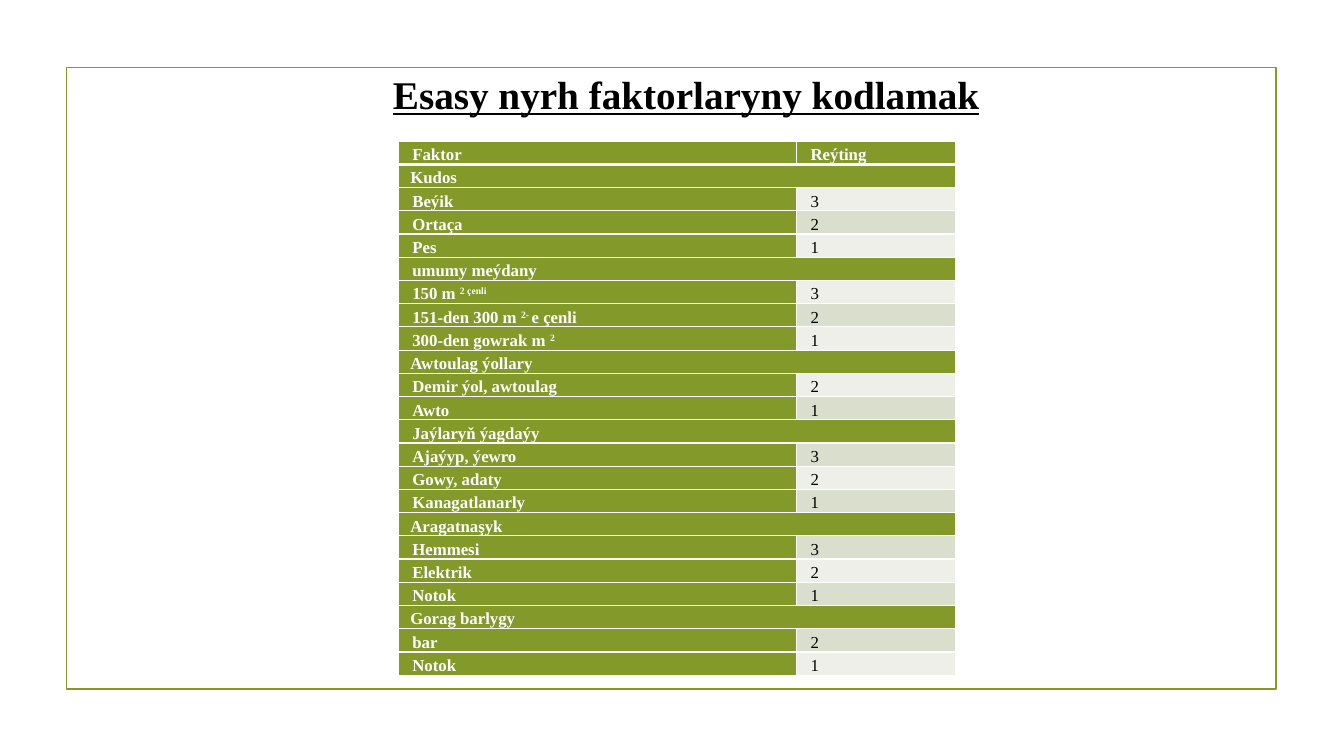
from dataclasses import dataclass

from lxml.etree import SubElement
from pptx import Presentation
from pptx.dml.color import RGBColor
from pptx.enum.shapes import MSO_SHAPE
from pptx.enum.text import MSO_ANCHOR, PP_ALIGN
from pptx.oxml.ns import qn
from pptx.util import Inches, Pt


@dataclass(frozen=True)
class Theme:
    font: str = "Times New Roman"
    olive: str = "83992A"
    light_band: str = "EDEFE8"
    dark_band: str = "D9DECD"
    white: str = "FFFFFF"
    black: str = "000000"
    title_size: int = 28
    table_size: int = 12
    frame_width: float = 1.25
    border: int = 1
    header_border: int = 3
    line_spacing: float = 1.15


# Content: section, its indent in inches, its factors and their ratings;
# text between carets is superscript
HEADER = ("Faktor", "Reýting")
SECTIONS = [
    ("Kudos", 0.12, [("Beýik", 3), ("Ortaça", 2), ("Pes", 1)]),
    ("umumy meýdany", 0.14, [
        ("150 m ^2 çenli^", 3),
        ("151-den 300 m ^2- ^e çenli", 2),
        ("300-den gowrak m ^2^", 1)]),
    ("Awtoulag ýollary", 0.12, [("Demir ýol, awtoulag", 2), ("Awto", 1)]),
    ("Jaýlaryň ýagdaýy", 0.14, [
        ("Ajaýyp, ýewro", 3), ("Gowy, adaty", 2), ("Kanagatlanarly", 1)]),
    ("Aragatnaşyk", 0.12, [("Hemmesi", 3), ("Elektrik", 2), ("Notok", 1)]),
    ("Gorag barlygy", 0.12, [("bar", 2), ("Notok", 1)]),
]
FACTOR_INDENT = 0.14


class SlideBuilder:
    """Places elements by percentages of the slide's width and height."""

    def __init__(self, deck, theme):
        self.deck, self.theme = deck, theme
        self.slide = deck.slides.add_slide(deck.slide_layouts[6])

    def across(self, percent):
        return round(self.deck.slide_width * percent / 100)

    def down(self, percent):
        return round(self.deck.slide_height * percent / 100)

    def area(self, left, top, width, height):
        return (self.across(left), self.down(top),
                self.across(width), self.down(height))

    def add_runs(self, paragraph, text, color, **formats):
        for position, part in enumerate(text.split("^")):
            if not part:
                continue
            run = paragraph.add_run()
            run.text = part
            run.font.color.rgb = RGBColor.from_string(color)
            for attribute, value in {"name": self.theme.font, **formats}.items():
                setattr(run.font, attribute, value)
            if position % 2:
                run._r.get_or_add_rPr().set("baseline", "30000")

    def frame(self, *place):
        border = self.slide.shapes.add_shape(MSO_SHAPE.RECTANGLE, *self.area(*place))
        border.shadow.inherit = False
        border.fill.background()
        border.line.color.rgb = RGBColor.from_string(self.theme.olive)
        border.line.width = Pt(self.theme.frame_width)

    def title(self, text, *place):
        heading = self.slide.shapes.add_textbox(*self.area(*place)).text_frame
        heading.word_wrap = False
        self.add_runs(heading.paragraphs[0], text, self.theme.black,
                      size=Pt(self.theme.title_size), bold=True, underline=True)

    def borders(self, cell, top, bottom):
        widths = {"L": self.theme.border, "R": self.theme.border,
                  "T": top, "B": bottom}
        for side, width in widths.items():
            edge = SubElement(cell._tc.get_or_add_tcPr(), qn(f"a:ln{side}"),
                              w=str(Pt(width)))
            SubElement(SubElement(edge, qn("a:solidFill")), qn("a:srgbClr"),
                       val=self.theme.white)

    def cell(self, cell, row, text, fill, indent=FACTOR_INDENT, strong=True):
        theme = self.theme
        self.borders(cell,
                     top=theme.header_border if row == 1 else theme.border,
                     bottom=theme.header_border if row == 0 else theme.border)
        cell.fill.solid()
        cell.fill.fore_color.rgb = RGBColor.from_string(fill)
        layout = {"margin_left": 0, "margin_right": 0, "margin_top": 0,
                  "margin_bottom": 0, "vertical_anchor": MSO_ANCHOR.BOTTOM}
        for attribute, value in layout.items():
            setattr(cell, attribute, value)
        paragraph = cell.text_frame.paragraphs[0]
        paragraph.alignment = PP_ALIGN.JUSTIFY
        paragraph.line_spacing = theme.line_spacing
        paragraph.font.size = Pt(theme.table_size)
        paragraph._p.get_or_add_pPr().set("marL", str(Inches(indent)))
        self.add_runs(paragraph, text, theme.white if strong else theme.black,
                      size=Pt(theme.table_size), bold=strong)

    def rating_table(self, left, top, column_widths, row_height):
        theme = self.theme
        row_count = 1 + sum(1 + len(factors) for _, _, factors in SECTIONS)
        ratings = self.slide.shapes.add_table(
            row_count, len(column_widths),
            *self.area(left, top, sum(column_widths), row_height * row_count)).table
        ratings.horz_banding = False
        for column, width in zip(ratings.columns, column_widths):
            column.width = self.across(width)
        for line in ratings.rows:
            line.height = self.down(row_height)

        # Header
        for column, label in enumerate(HEADER):
            self.cell(ratings.cell(0, column), 0, label, theme.olive)

        # Sections, each a merged row followed by its factors
        row = 1
        for section, indent, factors in SECTIONS:
            section_cell = ratings.cell(row, 0)
            section_cell.merge(ratings.cell(row, 1))
            self.cell(section_cell, row, section, theme.olive, indent)
            for row, (factor, rating) in enumerate(factors, row + 1):
                band = theme.dark_band if row % 2 else theme.light_band
                self.cell(ratings.cell(row, 0), row, factor, theme.olive)
                self.cell(ratings.cell(row, 1), row, str(rating), band, strong=False)
            row += 1


def main():
    deck = Presentation()
    deck.slide_width, deck.slide_height = Inches(13.33), Inches(7.5)
    page = SlideBuilder(deck, Theme())
    page.frame(4.95, 8.93, 90.02, 82.27)
    page.title("Esasy nyrh faktorlaryny kodlamak", 28.5, 8.67, 45.69, 7.6)
    page.rating_table(29.63, 18.67, (29.63, 11.85), 3.07)
    deck.save("out.pptx")


if __name__ == "__main__":
    main()
